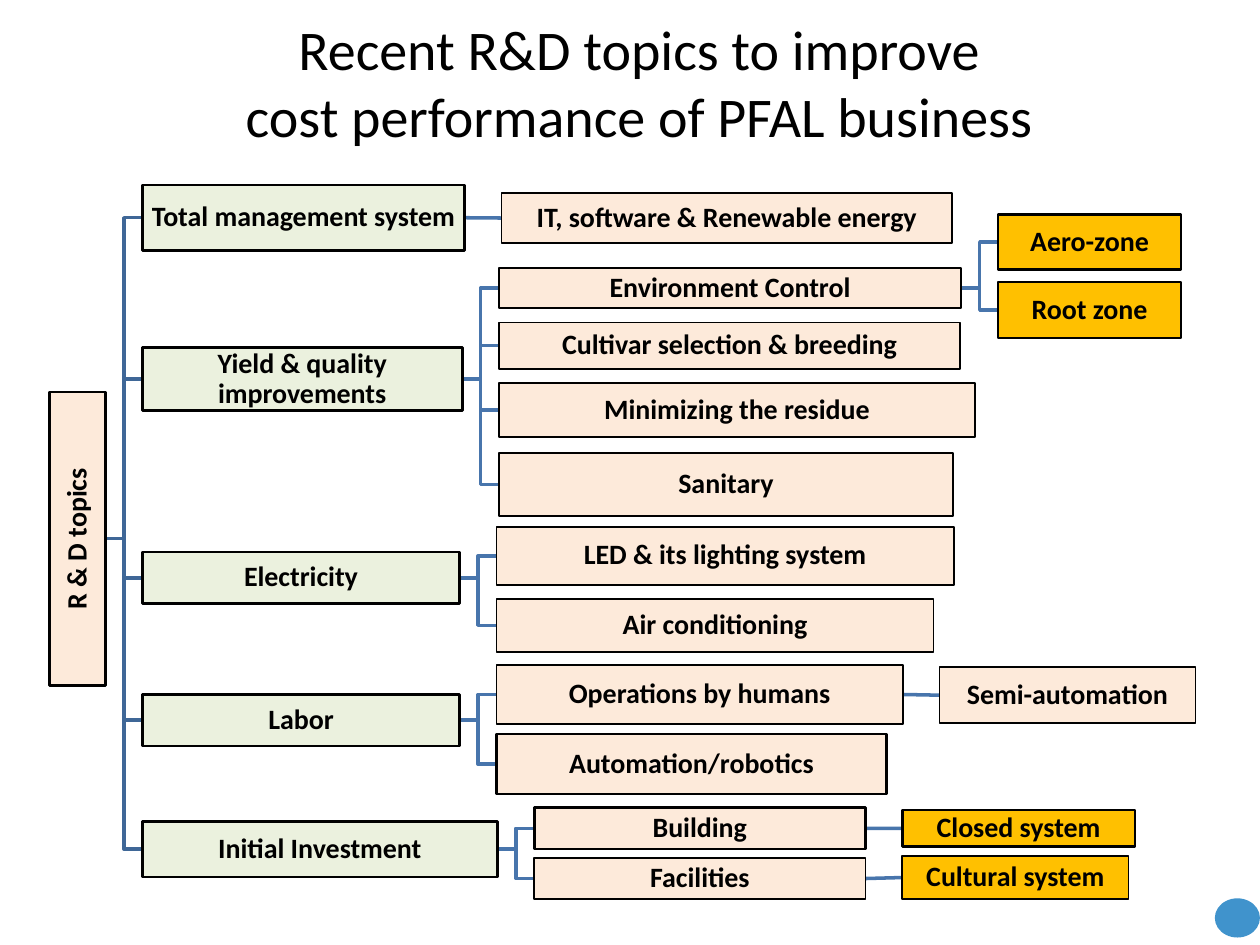
from dataclasses import dataclass, field

from lxml import etree
from pptx import Presentation
from pptx.dml.color import RGBColor
from pptx.enum.shapes import MSO_CONNECTOR, MSO_SHAPE
from pptx.enum.text import MSO_ANCHOR, PP_ALIGN
from pptx.oxml.ns import qn
from pptx.util import Cm, Pt

STRAIGHT, ELBOW = MSO_CONNECTOR.STRAIGHT, MSO_CONNECTOR.ELBOW
RECTANGLE, OVAL = MSO_SHAPE.RECTANGLE, MSO_SHAPE.OVAL
MIDDLE, CENTER = MSO_ANCHOR.MIDDLE, PP_ALIGN.CENTER
LEFT_SIDE, RIGHT_SIDE = 1, 3

BLACK = RGBColor(0x00, 0x00, 0x00)
PEACH = RGBColor(0xFD, 0xEA, 0xDA)
GREEN = RGBColor(0xEB, 0xF1, 0xDE)
AMBER = RGBColor(0xFF, 0xC0, 0x00)
TRUNK_BLUE = RGBColor(0x3F, 0x67, 0x97)
BRANCH_BLUE = RGBColor(0x48, 0x75, 0xAC)
DOT_BLUE = RGBColor(0x40, 0x93, 0xCC)

FONT = "Calibri"
TITLE_FONT = {"name": FONT, "size": Pt(32), "bold": False}
TOPIC_FONT = {"name": FONT, "size": Pt(16), "bold": True}
MARGIN = Cm(0.03)
TOPIC_FRAME = {"margin_left": MARGIN, "margin_right": MARGIN, "margin_top": MARGIN,
               "margin_bottom": MARGIN, "word_wrap": True, "vertical_anchor": MIDDLE}
LEVEL_GAP = 0.74
LEVEL_TOLERANCE = 0.06


@dataclass
class Topic:
    """A box of the tree, in cm; its left edge follows from its parent."""
    text: str
    top: float
    width: float
    height: float
    fill: RGBColor = PEACH
    border: float = 1
    children: list = field(default_factory=list)

    @property
    def middle(self):
        return self.top + self.height / 2


ROOT_LEFT = 1.0
ROOT = Topic("R & D topics", 7.9, 1.13, 5.92, PEACH, 1.5, [
    Topic("Total management system", 3.73, 6.5, 1.32, GREEN, 1.5, [
        Topic("IT, software & Renewable energy", 3.89, 9.09, 1.01),
    ]),
    Topic("Yield & quality improvements", 7.01, 6.45, 1.27, GREEN, 1.5, [
        Topic("Environment Control", 5.41, 9.32, 0.8, children=[
            Topic("Aero-zone", 4.32, 3.69, 1.12, AMBER, 1.5),
            Topic("Root zone", 5.69, 3.69, 1.12, AMBER),
        ]),
        Topic("Cultivar selection & breeding", 6.5, 9.3, 0.94),
        Topic("Minimizing the residue", 7.72, 9.6, 1.09, border=1.5),
        Topic("Sanitary", 9.14, 9.15, 1.26),
    ]),
    Topic("Electricity", 11.13, 6.4, 1.04, GREEN, 1.5, [
        Topic("LED & its lighting system", 10.62, 9.22, 1.17),
        Topic("Air conditioning", 12.07, 8.81, 1.07),
    ]),
    Topic("Labor", 14.0, 6.4, 1.04, GREEN, 1.5, [
        Topic("Operations by humans", 13.41, 8.19, 1.18, children=[
            Topic("Semi-automation", 13.45, 5.16, 1.13),
        ]),
        Topic("Automation/robotics", 14.8, 7.86, 1.21, border=1.5),
    ]),
    Topic("Initial Investment", 16.56, 7.16, 1.12, GREEN, 1.5, [
        Topic("Building", 16.28, 6.68, 0.84, border=1.5, children=[
            Topic("Closed system", 16.33, 4.69, 0.74, AMBER, 1.5),
        ]),
        Topic("Facilities", 17.29, 6.68, 0.84, children=[
            Topic("Cultural system", 17.25, 4.56, 0.88, AMBER),
        ]),
    ]),
])


def apply_format(target, values):
    for name, value in values.items():
        setattr(target, name, value)


def write_centred(text_frame, text, font_format):
    text_frame.text = text
    paragraph = text_frame.paragraphs[0]
    paragraph.alignment = CENTER
    for run in paragraph.runs:
        apply_format(run.font, font_format)
        run.font.color.rgb = BLACK
    return paragraph


def set_title(slide, text):
    title = slide.shapes.title
    apply_format(title, {"left": Cm(1.09), "top": Cm(0.33),
                         "width": Cm(23.6), "height": Cm(2.64)})
    title.text_frame.vertical_anchor = MIDDLE
    write_centred(title.text_frame, text, TITLE_FONT)


def add_corner_dot(slide):
    dot = slide.shapes.add_shape(OVAL, Cm(24.49), Cm(18.11), Cm(0.91), Cm(0.79))
    dot.shadow.inherit = False
    dot.fill.solid()
    dot.fill.fore_color.rgb = DOT_BLUE
    dot.line.fill.background()


def add_topic_box(slide, topic, left, upright):
    """Draw the box; an upright one is a lying box turned about its centre."""
    width, height = topic.width, topic.height
    if upright:
        width, height = height, width
    box = slide.shapes.add_shape(
        RECTANGLE, Cm(left + (topic.width - width) / 2), Cm(topic.middle - height / 2),
        Cm(width), Cm(height))
    box.rotation = 270 if upright else 0
    box.shadow.inherit = False
    box.fill.solid()
    box.fill.fore_color.rgb = topic.fill
    box.line.color.rgb = BLACK
    box.line.width = Pt(topic.border)
    apply_format(box.text_frame, TOPIC_FRAME)
    write_centred(box.text_frame, topic.text, TOPIC_FONT).line_spacing = 0.9
    return box


def add_branch(slide, parent, child, right, color):
    """Link two topics across the gap, behind the boxes."""
    level = abs(parent.middle - child.middle) < LEVEL_TOLERANCE
    branch = slide.shapes.add_connector(
        STRAIGHT if level else ELBOW, Cm(right), Cm(parent.middle),
        Cm(right + LEVEL_GAP), Cm(child.middle))
    branch.line.color.rgb = color
    branch.line.width = Pt(2)
    etree.SubElement(branch._element.spPr, qn("a:effectLst"))
    slide.shapes._spTree.insert(2, branch._element)
    return branch


def add_tree(slide, topic, left, is_root=False):
    box = add_topic_box(slide, topic, left, upright=is_root)
    right = left + topic.width
    color = TRUNK_BLUE if is_root else BRANCH_BLUE
    for child in topic.children:
        child_box = add_tree(slide, child, right + LEVEL_GAP)
        branch = add_branch(slide, topic, child, right, color)
        if not is_root:
            branch.begin_connect(box, RIGHT_SIDE)
            branch.end_connect(child_box, LEFT_SIDE)
    return box


def main():
    presentation = Presentation()
    presentation.slide_width, presentation.slide_height = Cm(25.4), Cm(19.05)
    slide = presentation.slides.add_slide(presentation.slide_layouts[5])
    set_title(slide, "Recent R&D topics to improve\vcost performance of PFAL business")
    add_corner_dot(slide)
    add_tree(slide, ROOT, ROOT_LEFT, is_root=True)
    presentation.save("out.pptx")


if __name__ == "__main__":
    main()
